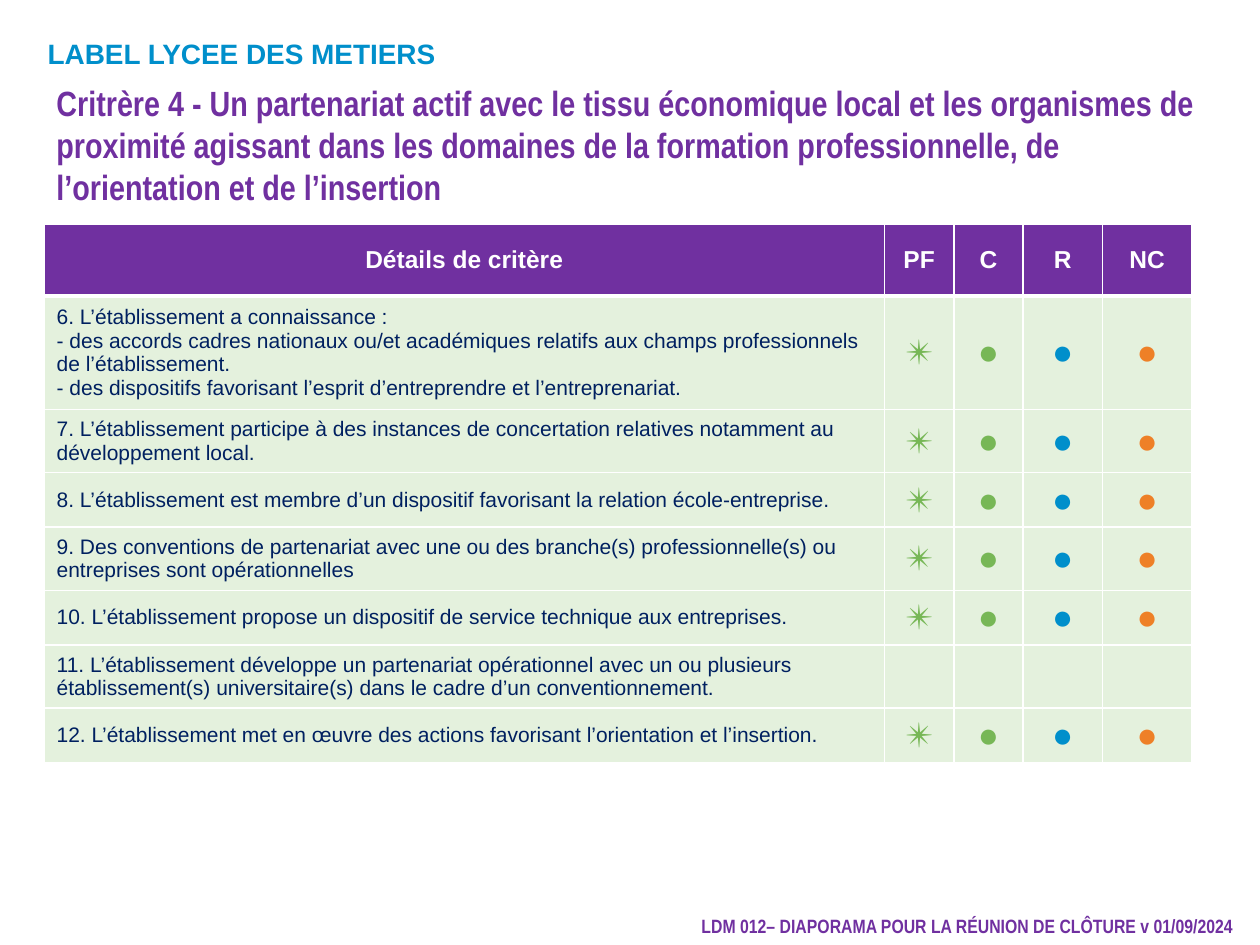
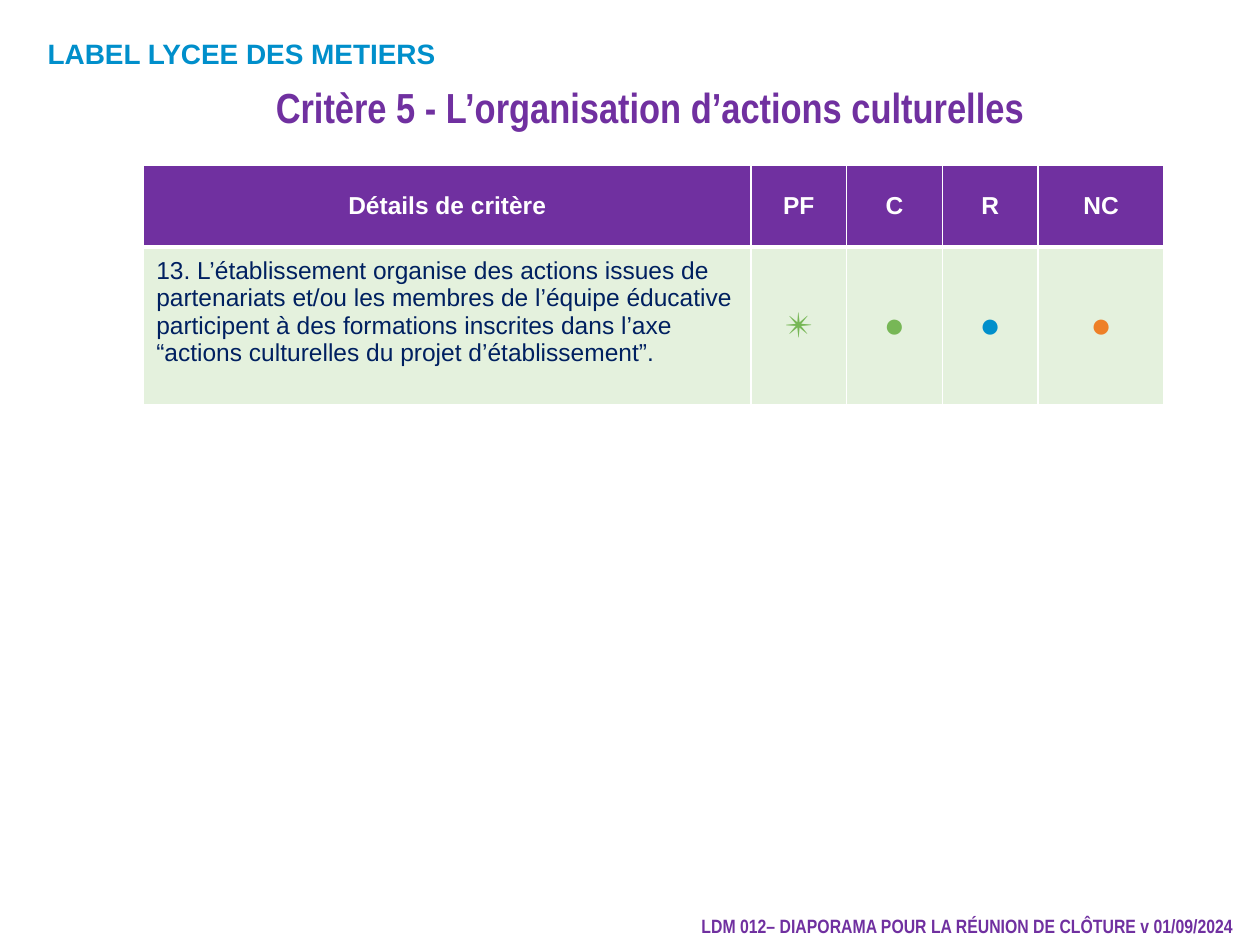
import pptx
import pptx.util
import pptx.dml.color
import pptx.enum.text
import pptx.oxml
import pptx.oxml.ns

Inches = pptx.util.Inches
ALIGN = {"l": pptx.enum.text.PP_ALIGN.LEFT, "c": pptx.enum.text.PP_ALIGN.CENTER,
         "r": pptx.enum.text.PP_ALIGN.RIGHT}
TOP = pptx.enum.text.MSO_ANCHOR.TOP
MIDDLE = pptx.enum.text.MSO_ANCHOR.MIDDLE

PURPLE, BLUE, NAVY = "7030A0", "008FCB", "002060"
GREEN, ORANGE, PALE, WHITE = "77B756", "EE8027", "E4F1DD", "FFFFFF"

BANNER = "LABEL LYCEE DES METIERS"
FOOTER = "LDM 012– DIAPORAMA POUR LA RÉUNION DE CLÔTURE v 01/09/2024"
HEADERS = ["Détails de critère", "PF", "C", "R", "NC"]
RATINGS = [("✴", GREEN), ("●", GREEN), ("●", BLUE), ("●", ORANGE)]
ONE_LINE, TWO_LINES, FOUR_LINES = 0.43, 0.5, 0.9

CRITERIA = [
    {
        "title": "Critrère 4 - Un partenariat actif avec le tissu économique local et les "
                 "organismes de proximité agissant dans les domaines de la formation "
                 "professionnelle, de l’orientation et de l’insertion",
        "title_box": (0.35, 0.6, 9.37, 0.82), "title_size": 20,
        "table_at": (0.35, 1.78), "columns": [6.67, 0.55, 0.55, 0.63, 0.71],
        "header_height": 0.57, "size": 12, "anchor": MIDDLE, "margin_top": 0.05,
        "details": [
            (FOUR_LINES, True, [
                "6. L’établissement a connaissance :",
                "- des accords cadres nationaux ou/et académiques relatifs aux champs "
                "professionnels de l’établissement.",
                "- des dispositifs favorisant l’esprit d’entreprendre et l’entreprenariat."]),
            (TWO_LINES, True, ["7. L’établissement participe à des instances de concertation "
                               "relatives notamment au développement local."]),
            (ONE_LINE, True, ["8. L’établissement est membre d’un dispositif favorisant la "
                              "relation école-entreprise."]),
            (TWO_LINES, True, ["9. Des conventions de partenariat avec une ou des branche(s) "
                               "professionnelle(s) ou entreprises sont opérationnelles"]),
            (ONE_LINE, True, ["10. L’établissement propose un dispositif de service technique "
                              "aux entreprises."]),
            (TWO_LINES, False, ["11. L’établissement développe un partenariat opérationnel avec "
                                "un ou plusieurs établissement(s) universitaire(s) dans le "
                                "cadre d’un conventionnement."]),
            (ONE_LINE, True, ["12. L’établissement met en œuvre des actions favorisant "
                              "l’orientation et l’insertion."]),
        ],
    },
    {
        "title": "Critère 5 - L’organisation d’actions culturelles",
        "title_box": (2.09, 0.6, 7.91, 0.82), "title_size": 24,
        "table_at": (1.14, 1.31), "columns": [4.82, 0.76, 0.76, 0.76, 1],
        "header_height": 0.65, "size": 14, "anchor": TOP, "margin_top": 0.08,
        "details": [
            (1.25, True, ["13. L’établissement organise des actions issues de partenariats "
                          "et/ou les membres de l’équipe éducative participent à des formations "
                          "inscrites dans l’axe “actions culturelles du projet "
                          "d’établissement”."]),
        ],
    },
]


def rgb(value):
    return pptx.dml.color.RGBColor.from_string(value)


def write(tf, lines, size=12, color=NAVY, bold=False, font="Arial", align="l"):
    tf.word_wrap = True
    for i, line in enumerate(lines):
        p = tf.paragraphs[0] if i == 0 else tf.add_paragraph()
        p.alignment = ALIGN[align]
        r = p.add_run()
        r.text = line
        r.font.size = pptx.util.Pt(size)
        r.font.name = font
        r.font.bold = bold
        r.font.color.rgb = rgb(color)


def add_text(slide, box, text, **fmt):
    sp = slide.shapes.add_textbox(*map(Inches, box))
    write(sp.text_frame, [text], **fmt)


def style_cell(cell, fill, top=1, bottom=1):
    tcPr = cell._tc.get_or_add_tcPr()
    for side, width in (("L", 1), ("R", 1), ("T", top), ("B", bottom)):
        tcPr.append(pptx.oxml.parse_xml(
            f'<a:ln{side} {pptx.oxml.ns.nsdecls("a")} w="{pptx.util.Pt(width)}">'
            f'<a:solidFill><a:srgbClr val="{WHITE}"/></a:solidFill></a:ln{side}>'))
    cell.fill.solid()
    cell.fill.fore_color.rgb = rgb(fill)
    cell.vertical_anchor = MIDDLE


def add_criteria_table(slide, criterion):
    details, columns = criterion["details"], criterion["columns"]
    heights = [criterion["header_height"]] + [height for height, _, _ in details]
    box = (*criterion["table_at"], sum(columns), sum(heights))
    table = slide.shapes.add_table(len(heights), len(columns), *map(Inches, box)).table
    table.horz_banding = False
    for column, width in zip(table.columns, columns):
        column.width = Inches(width)
    for row, height in zip(table.rows, heights):
        row.height = Inches(height)

    for cell, label in zip(table.rows[0].cells, HEADERS):
        style_cell(cell, PURPLE, bottom=3)
        write(cell.text_frame, [label], size=14, color=WHITE, bold=True, align="c")

    for i, (_, rated, lines) in enumerate(details, 1):
        cells = list(table.rows[i].cells)
        for cell in cells:
            style_cell(cell, PALE, top=3 if i == 1 else 1)
        cells[0].vertical_anchor = criterion["anchor"]
        cells[0].margin_top = Inches(criterion["margin_top"])
        write(cells[0].text_frame, lines, size=criterion["size"])
        if rated:
            for cell, (mark, color) in zip(cells[1:], RATINGS):
                write(cell.text_frame, [mark], size=20, color=color, align="c")


def add_criterion_slide(prs, criterion):
    slide = prs.slides.add_slide(prs.slide_layouts[6])
    add_text(slide, (3.19, 7.21, 6.7, 0.29), FOOTER, size=11, color=PURPLE, bold=True,
             font="Arial Narrow", align="r")
    add_text(slide, (0.28, 0.24, 3.94, 0.37), BANNER, size=16, color=BLUE, bold=True)
    add_criteria_table(slide, criterion)
    add_text(slide, criterion["title_box"], criterion["title"], size=criterion["title_size"],
             color=PURPLE, bold=True, font="Arial Narrow")


def main():
    prs = pptx.Presentation()
    prs.slide_width, prs.slide_height = Inches(10), Inches(7.5)
    for criterion in CRITERIA:
        add_criterion_slide(prs, criterion)
    prs.save("out.pptx")


if __name__ == "__main__":
    main()
